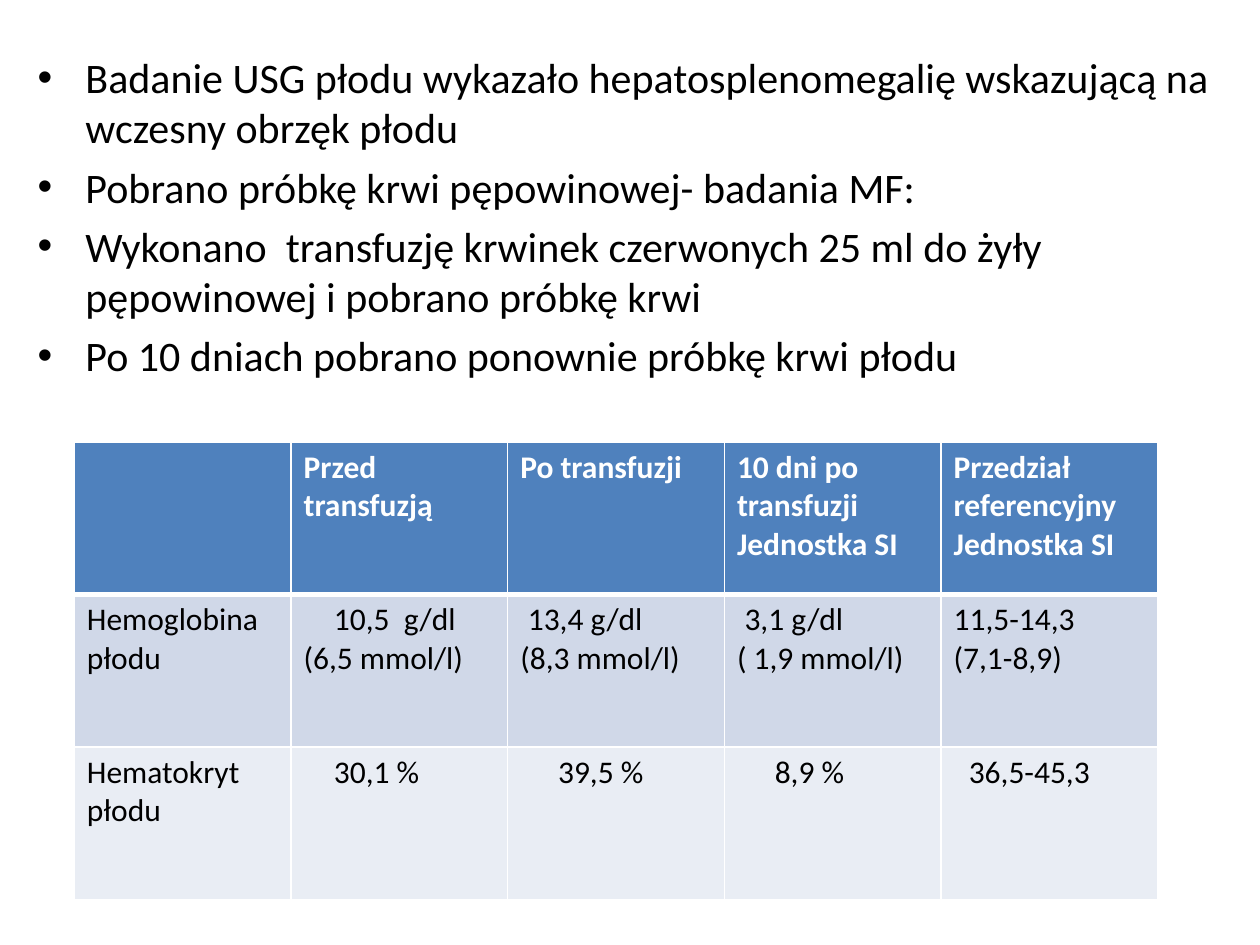
from lxml.etree import SubElement
from pptx import Presentation
from pptx.dml.color import RGBColor as Rgb
from pptx.oxml.ns import qn
from pptx.util import Inches, Pt

COLORS = {"text": "000000", "white": "FFFFFF", "header": "4F81BD",
          "band_dark": "D0D8E8", "band_light": "E9EDF4"}
BODY = {"name": "Calibri", "size": Pt(24), "bold": False}
CELL = {"name": "Calibri", "size": Pt(18), "bold": False}
HEADER = {**CELL, "bold": True}
COLUMN, ROW = 1.72, 1.21
STEP = 0.06  # indent unit inside the table cells, inches

FINDINGS = [
    "Badanie USG płodu wykazało hepatosplenomegalię wskazującą na wczesny obrzęk płodu",
    "Pobrano próbkę krwi pępowinowej- badania MF:",
    "Wykonano  transfuzję krwinek czerwonych 25 ml do żyły pępowinowej i pobrano próbkę krwi",
    "Po 10 dniach pobrano ponownie próbkę krwi płodu",
]

# Each cell: its paragraphs, then the indent steps of the first one
RESULTS = [
    [("", 0), ("Przed transfuzją", 0), ("Po transfuzji", 0),
     ("10 dni po transfuzji\nJednostka SI", 0),
     ("Przedział referencyjny\nJednostka SI", 0)],
    [("Hemoglobina płodu", 0), ("10,5  g/dl\n(6,5 mmol/l)", 4),
     ("13,4 g/dl\n(8,3 mmol/l)", 1), ("3,1 g/dl\n( 1,9 mmol/l)", 1),
     ("11,5-14,3\n(7,1-8,9)", 0)],
    [("Hematokryt\npłodu", 0), ("30,1 %", 4), ("39,5 %", 5), ("8,9 %", 5),
     ("36,5-45,3", 2)],
]


def style_font(font, style, color):
    for name, value in style.items():
        setattr(font, name, value)
    font.color.rgb = Rgb.from_string(COLORS[color])


def set_indent(para, left, first=0):
    properties = para._p.get_or_add_pPr()
    properties.set("marL", str(Inches(left)))
    properties.set("indent", str(Inches(first)))
    return properties


def add_bullets(page, items, left, top, width, height):
    frame = page.shapes.add_textbox(
        Inches(left), Inches(top), Inches(width), Inches(height)).text_frame
    frame.word_wrap = True
    for index, item in enumerate(items):
        para = frame.paragraphs[0] if index == 0 else frame.add_paragraph()
        properties = set_indent(para, 0.38, -0.38)
        SubElement(properties, qn("a:buFont"), typeface="Arial")
        SubElement(properties, qn("a:buChar"), char="•")
        para.space_before = Pt(5 if index else 0)
        span = para.add_run()
        span.text = item
        style_font(span.font, BODY, "text")


def add_borders(cell, widths):
    properties = cell._tc.get_or_add_tcPr()
    for index, (side, width) in enumerate(widths.items()):
        line = properties.makeelement(qn(f"a:{side}"), {"w": str(Pt(width))})
        fill = SubElement(line, qn("a:solidFill"))
        SubElement(fill, qn("a:srgbClr"), val=COLORS["white"])
        properties.insert(index, line)


def fill_cell(cell, text, steps, style, color, fill):
    cell.fill.solid()
    cell.fill.fore_color.rgb = Rgb.from_string(COLORS[fill])
    cell.text = text
    for para in cell.text_frame.paragraphs:
        style_font(para.font, style, color)
        for span in para.runs:
            style_font(span.font, style, color)
    if steps:
        set_indent(cell.text_frame.paragraphs[0], 0, steps * STEP)


def add_results(page, rows, left, top):
    count = len(rows[0])
    table = page.shapes.add_table(
        len(rows), count, Inches(left), Inches(top),
        Inches(count * COLUMN), Inches(len(rows) * ROW)).table
    fills = ["header", "band_dark", "band_light"]
    for r, row in enumerate(rows):
        style, color = (CELL, "text") if r else (HEADER, "white")
        borders = {"lnL": 1, "lnR": 1, "lnT": 3 if r == 1 else 1,
                   "lnB": 1 if r else 3}
        for c, (text, steps) in enumerate(row):
            cell = table.cell(r, c)
            fill_cell(cell, text, steps, style, color, fills[r])
            add_borders(cell, borders)


def main():
    deck = Presentation()
    deck.slide_width, deck.slide_height = Inches(10), Inches(7.5)
    page = deck.slides.add_slide(deck.slide_layouts[6])

    # Clinical course
    add_bullets(page, FINDINGS, 0.2, 0.36, 9.69, 6.85)

    # Blood results before and after transfusion
    add_results(page, RESULTS, 0.59, 3.51)

    deck.save("out.pptx")


if __name__ == "__main__":
    main()
